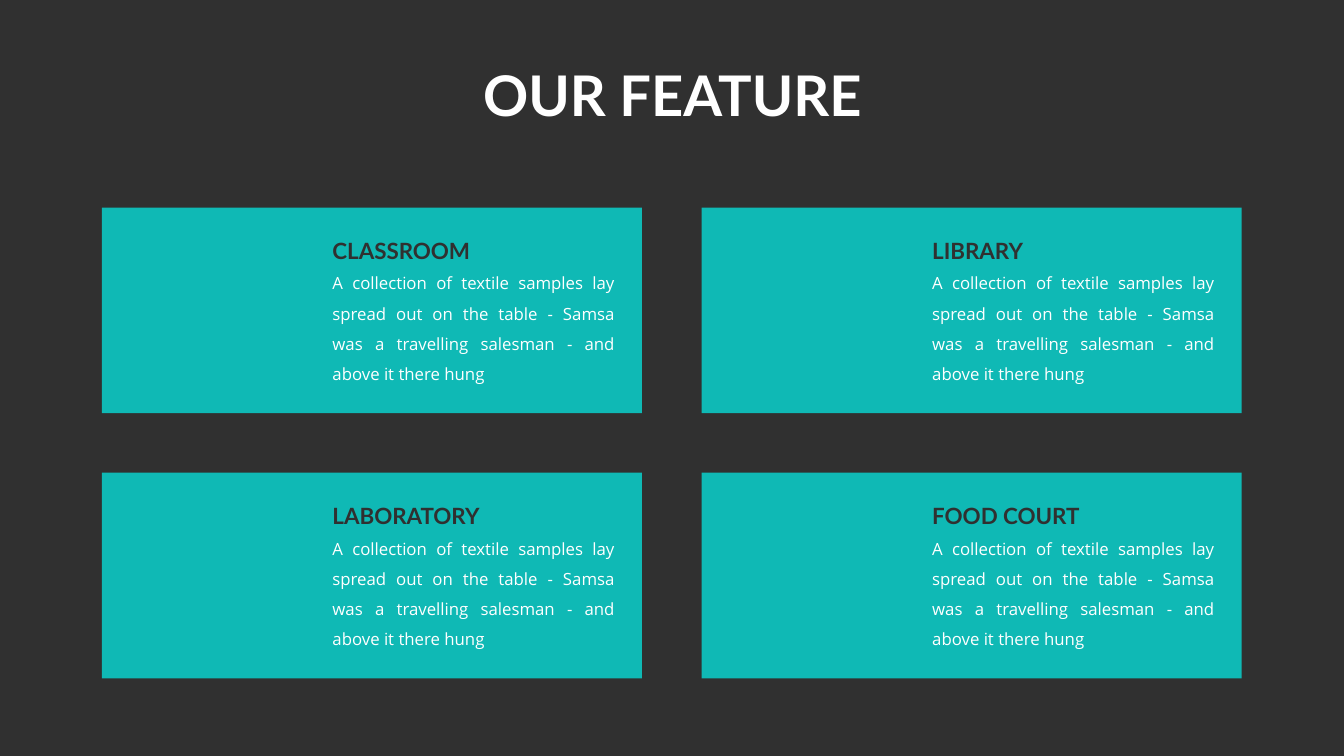
from pptx import Presentation
from pptx.dml.color import RGBColor
from pptx.enum.shapes import MSO_SHAPE
from pptx.enum.text import MSO_ANCHOR, MSO_AUTO_SIZE, PP_ALIGN
from pptx.util import Pt

RECT = MSO_SHAPE.RECTANGLE
MIDDLE = MSO_ANCHOR.MIDDLE
GROW = MSO_AUTO_SIZE.SHAPE_TO_FIT_TEXT
LEFT, CENTER, JUSTIFY = PP_ALIGN.LEFT, PP_ALIGN.CENTER, PP_ALIGN.JUSTIFY

DARK = RGBColor(0x30, 0x30, 0x30)
TEAL = RGBColor(0x0F, 0xB9, 0xB5)
WHITE = RGBColor(0xFF, 0xFF, 0xFF)

BODY = ("A collection of textile samples lay spread out on the table - "
        "Samsa was a travelling salesman - and above it there hung")
CARDS = [
    [("CLASSROOM", 113.76), ("LIBRARY", 81.36)],
    [("LABORATORY", 121.68), ("FOOD COURT", 121.68)],
]


class Deck:
    """Hold the style and the current slide, and draw each kind of element."""

    head_font = "Lato"
    body_font = "Open Sans"

    def __init__(self):
        self.prs = Presentation()
        self.prs.slide_width, self.prs.slide_height = Pt(960), Pt(540)
        self.slide = self.prs.slides.add_slide(self.prs.slide_layouts[5])
        fill = self.slide.background.fill
        fill.solid()
        fill.fore_color.rgb = DARK

    def set_text(self, shape, text, size, color, font, bold=False,
                 align=LEFT, spacing=1.0, wrap=True):
        frame = shape.text_frame
        frame.text = text
        frame.word_wrap = wrap
        frame.auto_size = GROW
        frame.vertical_anchor = MIDDLE
        para = frame.paragraphs[0]
        para.alignment = align
        para.line_spacing = spacing
        style = para.runs[0].font
        style.name, style.size, style.bold = font, Pt(size), bold
        style.color.rgb = color

    def title(self, text, left, top, width, height):
        shape = self.slide.shapes.title
        shape.left, shape.top = Pt(left), Pt(top)
        shape.width, shape.height = Pt(width), Pt(height)
        self.set_text(shape, text, 40, WHITE, self.head_font, True, CENTER, 0.9)
        frame = shape.text_frame
        frame.margin_left = frame.margin_right = Pt(7.2)
        frame.margin_top = frame.margin_bottom = Pt(8.64)

    def panel(self, left, top, width, height):
        shape = self.slide.shapes.add_shape(
            RECT, Pt(left), Pt(top), Pt(width), Pt(height))
        shape.shadow.inherit = False
        shape.fill.solid()
        shape.fill.fore_color.rgb = TEAL
        shape.line.fill.background()

    def label(self, left, top, width, height, text, *style, **layout):
        box = self.slide.shapes.add_textbox(
            Pt(left), Pt(top), Pt(width), Pt(height))
        self.set_text(box, text, *style, **layout)

    def card(self, left, top, name, width):
        self.panel(left, top, 385.92, 146.88)
        inner = left + 157.68
        self.label(inner, top + 17.28, width, 26.64, name,
                   16, DARK, self.head_font, True, wrap=False)
        self.label(inner, top + 36.72, 216, 92.16, BODY,
                   12, WHITE, self.body_font, align=JUSTIFY, spacing=1.5)


def main():
    deck = Deck()
    deck.title("OUR FEATURE", 155.52, 40.32, 649.44, 60.48)
    for row, cards in enumerate(CARDS):
        for col, (name, width) in enumerate(cards):
            deck.card(72.72 + col * 428.4, 148.32 + row * 189.36, name, width)
    deck.prs.save("out.pptx")


if __name__ == "__main__":
    main()
